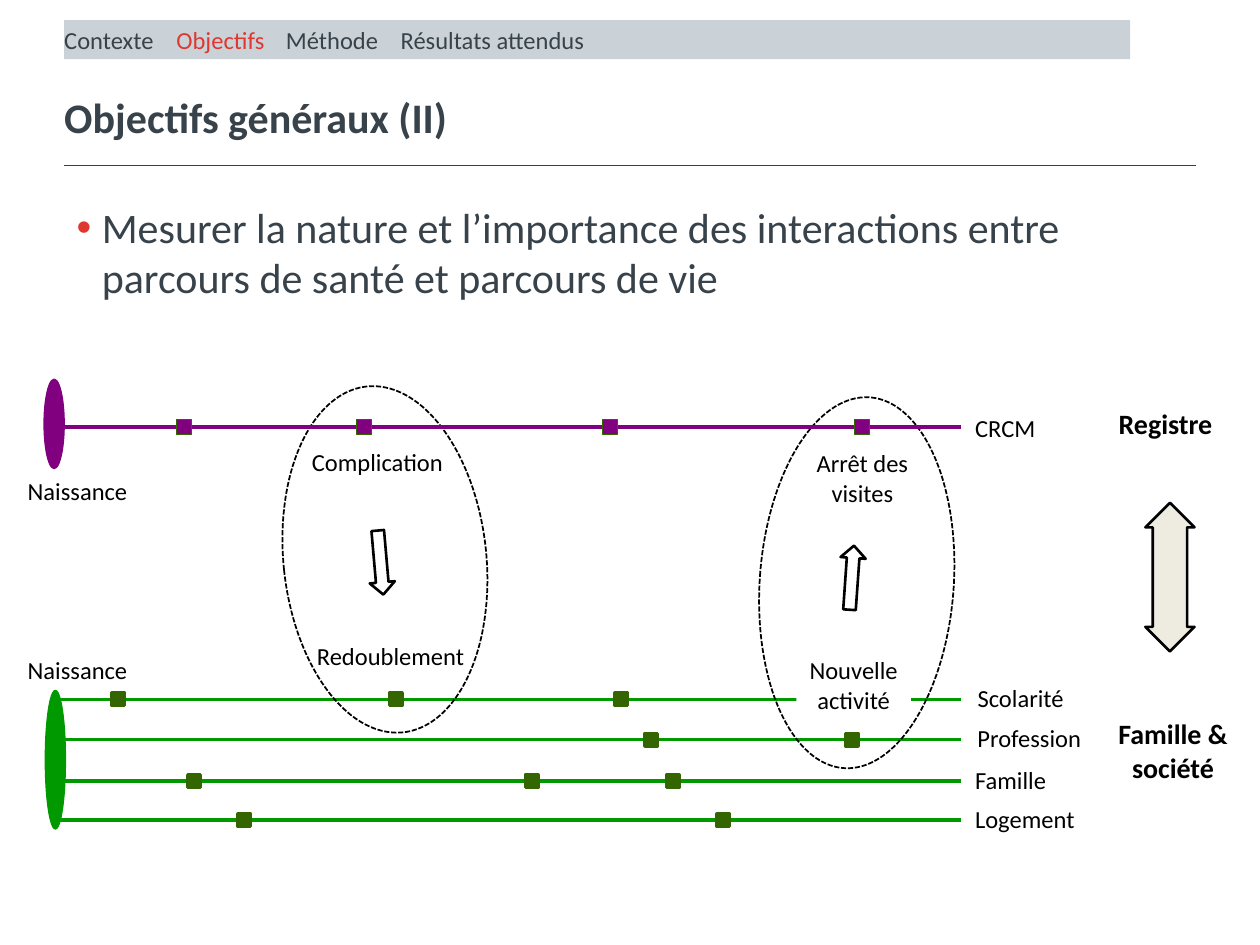
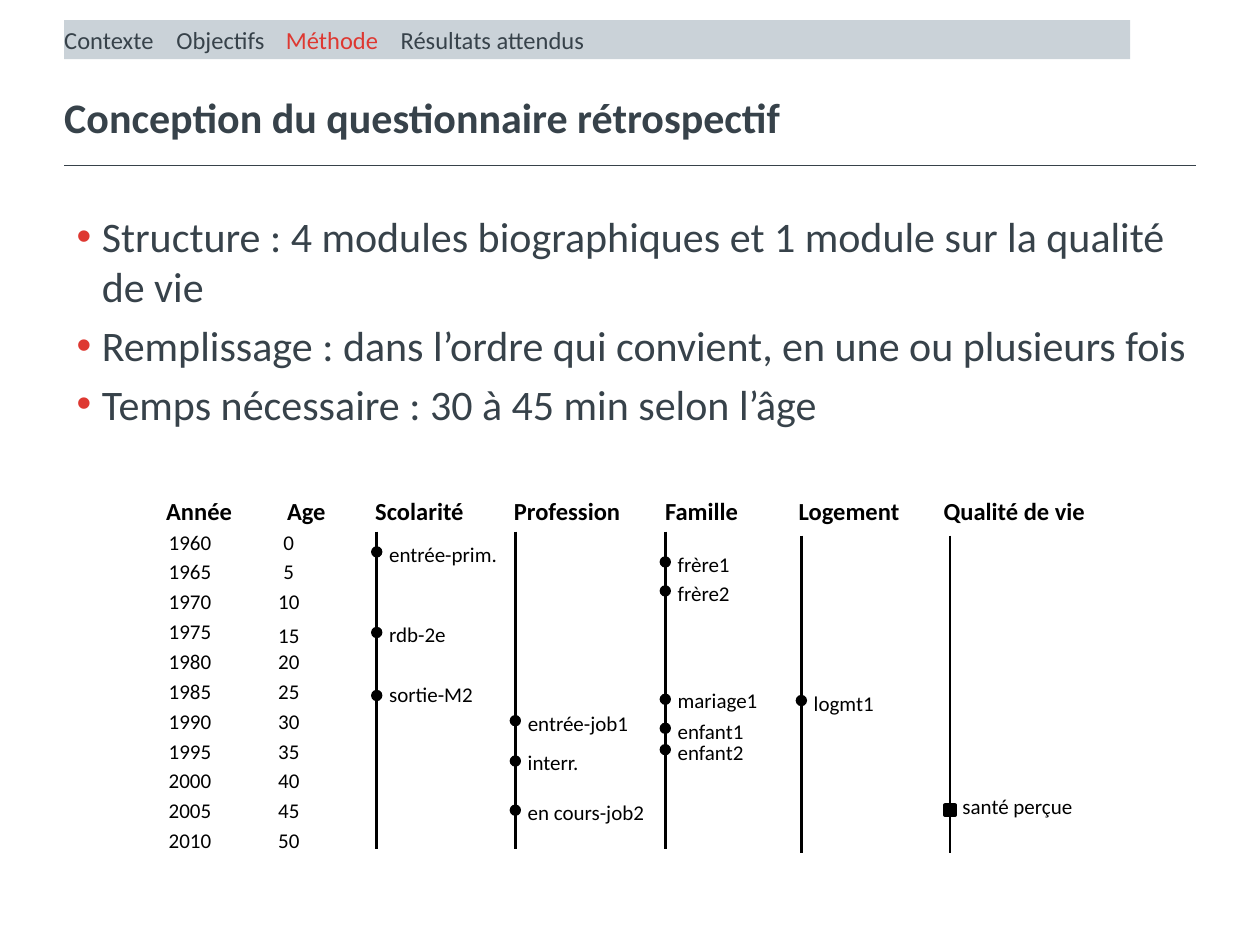
import pptx
import pptx.dml.color
import pptx.enum.dml
import pptx.enum.shapes
import pptx.enum.text
import pptx.oxml.ns
import pptx.util
from lxml import etree

Inches = pptx.util.Inches
Pt = pptx.util.Pt
SHAPE = pptx.enum.shapes.MSO_SHAPE
ALIGN = pptx.enum.text.PP_ALIGN
ANCHOR = pptx.enum.text.MSO_ANCHOR
AUTO_SIZE = pptx.enum.text.MSO_AUTO_SIZE
qn = pptx.oxml.ns.qn

COLORS = {
    "slate": "37424A", "band": "CAD2D8", "accent": "DE3831",
    "black": "000000", "white": "FFFFFF", "ivory": "EEECE1",
    "green": "009900", "dark green": "336600", "purple": "800080",
}
FORMATS = {
    "title": {"size": Pt(24), "bold": True, "color": "slate"},
    "bullet": {"size": Pt(24), "color": "slate"},
    "band": {"size": Pt(14), "color": "slate"},
    "band current": {"size": Pt(14), "color": "accent"},
    "group": {"size": Pt(16), "bold": True, "color": "black"},
    "header": {"size": Pt(14), "bold": True, "color": "black"},
    "label": {"size": Pt(14), "color": "black"},
    "entry": {"size": Pt(12), "color": "black"},
}
SECTIONS = ["Contexte", "Objectifs", "Méthode", "Résultats attendus"]
SECTION_TABS = [0.89, 1.76, 2.67]


def rgb(name):
    return pptx.dml.color.RGBColor.from_string(COLORS[name])


class SlideBuilder:
    FONT = "Calibri"

    def __init__(self, deck):
        self.deck = deck
        self.page = None

    def start(self, title, section):
        """Add a slide with its title, rule and section band."""
        self.page = self.deck.slides.add_slide(self.deck.slide_layouts[5])
        self.line(0.51, 1.31, 9.49, 1.31, "slate", 0.5)
        box = self.page.shapes.title
        self.place(box, 0.51, 0.63, 8.47, 0.59)
        self.frame(box, left_inset=0)
        self.fill_text(box, [title], "title")
        band = self.shape(SHAPE.RECTANGLE, 0.51, 0.16, 8.46, 0.31, "band")
        self.frame(band, left_inset=0)
        para = band.text_frame.paragraphs[0]
        para.alignment = ALIGN.LEFT
        self.tabs(para, SECTION_TABS)
        for index, name in enumerate(SECTIONS):
            style = "band current" if name == section else "band"
            self.span(para, "\t" + name if index else name, style)

    @staticmethod
    def place(box, left, top, width, height):
        box.left, box.top = Inches(left), Inches(top)
        box.width, box.height = Inches(width), Inches(height)

    @staticmethod
    def frame(box, left_inset=0.1, wrap=True, anchor=ANCHOR.MIDDLE,
              auto_size=AUTO_SIZE.NONE):
        settings = {
            "margin_left": Inches(left_inset), "margin_right": Inches(0.1),
            "margin_top": Inches(0.05), "margin_bottom": Inches(0.05),
            "word_wrap": wrap, "vertical_anchor": anchor,
            "auto_size": auto_size,
        }
        for name, value in settings.items():
            setattr(box.text_frame, name, value)

    @staticmethod
    def tabs(para, stops):
        tab_list = etree.SubElement(para._p.get_or_add_pPr(), qn("a:tabLst"))
        for stop in stops:
            etree.SubElement(tab_list, qn("a:tab"), pos=str(Inches(stop)),
                             algn="l")

    def span(self, para, text, style):
        span = para.add_run()
        span.text = text
        span.font.name = self.FONT
        for name, value in FORMATS[style].items():
            if name == "color":
                span.font.color.rgb = rgb(value)
            else:
                setattr(span.font, name, value)

    def fill_text(self, box, lines, style, align=ALIGN.LEFT):
        for index, text in enumerate(lines):
            frame = box.text_frame
            para = frame.add_paragraph() if index else frame.paragraphs[0]
            para.alignment = align
            self.span(para, text, style)
        return box

    def text(self, lines, left, top, width, height, style,
             align=ALIGN.LEFT, wrap=False):
        box = self.page.shapes.add_textbox(
            Inches(left), Inches(top), Inches(width), Inches(height))
        self.frame(box, wrap=wrap, anchor=ANCHOR.TOP,
                   auto_size=AUTO_SIZE.SHAPE_TO_FIT_TEXT)
        return self.fill_text(box, lines, style, align)

    def bullets(self, lines, left, top, width, height):
        box = self.text(lines, left, top, width, height, "bullet", wrap=True)
        for index, para in enumerate(box.text_frame.paragraphs):
            props = para._p.get_or_add_pPr()
            props.set("marL", str(Inches(0.2)))
            props.set("indent", str(-Inches(0.2)))
            color = etree.SubElement(props, qn("a:buClr"))
            etree.SubElement(color, qn("a:srgbClr"), val=COLORS["accent"])
            etree.SubElement(props, qn("a:buFont"), typeface="Arial")
            etree.SubElement(props, qn("a:buChar"), char="•")
            para.space_before = Pt(4.8 if index else 0)

    def shape(self, kind, left, top, width, height, fill=None, line=None,
              weight=0.75, rotation=0, adjust=(), dash=None):
        box = self.page.shapes.add_shape(
            kind, Inches(left), Inches(top), Inches(width), Inches(height))
        box.shadow.inherit = False
        box.rotation = rotation
        if fill:
            box.fill.solid()
            box.fill.fore_color.rgb = rgb(fill)
        else:
            box.fill.background()
        if line:
            box.line.color.rgb = rgb(line)
            box.line.width = Pt(weight)
            if dash:
                box.line.dash_style = dash
        else:
            box.line.fill.background()
        for index, value in enumerate(adjust):
            box.adjustments[index] = value
        return box

    def line(self, x1, y1, x2, y2, color, weight):
        rule = self.page.shapes.add_connector(
            pptx.enum.shapes.MSO_CONNECTOR.STRAIGHT,
            Inches(x1), Inches(y1), Inches(x2), Inches(y2))
        rule.line.color.rgb = rgb(color)
        rule.line.width = Pt(weight)
        etree.SubElement(rule._element.spPr, qn("a:effectLst"))

    def track(self, y, start, color, marks, size, mark_fill, mark_weight):
        """Draw a life-course line with a square at each event."""
        self.line(start, y, 7.63, y, color, 2)
        for left in marks:
            self.shape(SHAPE.RECTANGLE, left, y - size / 2, size, size,
                       mark_fill, "dark green", mark_weight)

    def loop(self, left, top, width, height, rotation):
        """Draw the dashed outline that ties two linked events."""
        self.shape(SHAPE.OVAL, left, top, width, height, line="black",
                   weight=1, rotation=rotation,
                   dash=pptx.enum.dml.MSO_LINE.SQUARE_DOT)

    def link_arrow(self, left, top, rotation):
        self.shape(SHAPE.UP_ARROW, left, top, 0.2, 0.51, "white", "black",
                   1.5, rotation, (0.5, 0.49))


def build_objectives(builder):
    builder.start("Objectifs généraux (II)", "Objectifs")
    builder.bullets(["Mesurer la nature et l’importance des interactions "
                     "entre parcours de santé et parcours de vie"],
                    0.51, 1.55, 8.98, 0.91)

    builder.text(["Registre"], 8.78, 3.18, 0.95, 0.37, "group")
    builder.shape(SHAPE.UP_DOWN_ARROW, 9.09, 3.99, 0.39, 1.18, "ivory",
                  "black", 1.5, adjust=(0.5, 0.7))
    builder.text(["Famille &", "société"], 8.73, 5.64, 1.16, 0.64, "group",
                 ALIGN.CENTER)

    # label, line height, line start, label left, label width, marks
    life_tracks = [
        ("Scolarité", 5.55, 0.44, 7.66, 0.92, [0.89, 3.09, 4.88]),
        ("Profession", 5.87, 0.49, 7.66, 1.07, [5.12, 6.71]),
        ("Famille", 6.2, 0.49, 7.64, 0.8, [1.49, 4.17, 5.29]),
        ("Logement", 6.51, 0.44, 7.64, 1.03, [1.89, 5.69]),
    ]
    builder.shape(SHAPE.OVAL, 0.36, 5.48, 0.16, 1.1, "green", "green")
    for label, y, start, left, width, marks in life_tracks:
        builder.track(y, start, "green", marks, 0.1, "dark green", 2)
        builder.text([label], left, y - 0.18, width, 0.34, "label", wrap=True)

    builder.text(["Complication"], 2.37, 3.5, 1.25, 0.34, "label",
                 ALIGN.CENTER)
    builder.link_arrow(2.92, 4.21, 175)
    builder.text(["Redoublement"], 2.41, 5.04, 1.38, 0.34, "label",
                 ALIGN.CENTER)
    builder.loop(2.25, 3.06, 1.61, 2.76, 354)

    builder.text(["Arrêt des", "visites"], 6.21, 3.51, 1.27, 0.57, "label",
                 ALIGN.CENTER, wrap=True)
    builder.link_arrow(6.66, 4.33, 4)
    activity = builder.shape(SHAPE.RECTANGLE, 6.32, 5.15, 0.91, 0.57, "white")
    builder.frame(activity, wrap=False)
    builder.fill_text(activity, ["Nouvelle", "activité"], "label",
                      ALIGN.CENTER)
    builder.loop(6.03, 3.15, 1.54, 2.95, 4)

    builder.shape(SHAPE.OVAL, 0.35, 3.01, 0.16, 0.71, "purple", "purple")
    builder.track(3.39, 0.45, "purple", [1.4, 2.83, 4.78, 6.78], 0.12,
                  "purple", 0.75)
    builder.text(["CRCM"], 7.64, 3.23, 0.69, 0.34, "label")
    for top in (3.73, 5.15):
        builder.text(["Naissance"], 0.12, top, 0.99, 0.33, "label",
                     ALIGN.CENTER)


def build_questionnaire(builder):
    builder.start("Conception du questionnaire rétrospectif", "Méthode")
    builder.bullets([
        "Structure : 4 modules biographiques et 1 module sur la qualité de vie",
        "Remplissage : dans l’ordre qui convient, en une ou plusieurs fois",
        "Temps nécessaire : 30 à 45 min selon l’âge",
    ], 0.51, 1.62, 9.06, 1.88)

    headers = ["Année", "Age", "Scolarité", "Profession", "Famille",
               "Logement", "Qualité de vie"]
    box = builder.text(["\t".join(headers)], 1.22, 3.89, 7.64, 0.34, "header",
                       wrap=True)
    builder.tabs(box.text_frame.paragraphs[0],
                 [0.96, 1.66, 2.76, 3.96, 5.02, 6.17])

    for step in range(11):
        age = 5 * step
        top = 4.15 + 2.37 * step / 10
        left, width = (2.15, 0.29) if age < 10 else (2.11, 0.37)
        builder.text([str(1960 + age)], 1.24, top, 0.55, 0.3, "entry")
        age_top = top + 0.03 if age == 15 else top
        builder.text([str(age)], left, age_top, width, 0.3, "entry")

    # axis position, axis top, events as (label, mark top, label top, width)
    modules = [
        (2.99, 4.22, [("entrée-prim.", 4.34, 4.25, 1.07),
                      ("rdb-2e", 4.98, 4.88, 0.66),
                      ("sortie-M2", 5.48, 5.36, 0.88)]),
        (4.09, 4.22, [("entrée-job1", 5.68, 5.59, 1.01),
                      ("interr.", 6, 5.9, 0.63),
                      ("en cours-job2", 6.39, 6.3, 1.14)]),
        (5.28, 4.22, [("frère1", 4.42, 4.33, 0.62),
                      ("frère2", 4.65, 4.56, 0.62),
                      ("mariage1", 5.51, 5.41, 0.84),
                      ("enfant1", 5.74, 5.65, 0.73),
                      ("enfant2", 5.91, 5.82, 0.73)]),
        (6.36, 4.25, [("logmt1", 5.52, 5.43, 0.69)]),
        (7.54, 4.25, [("santé perçue", 6.39, 6.25, 1.08)]),
    ]
    for axis, axis_top, events in modules:
        builder.line(axis, axis_top, axis, axis_top + 2.52, "black", 1.5)
        for label, mark_top, label_top, width in events:
            kind, weight = SHAPE.OVAL, 0.75
            if label == "santé perçue":
                kind, weight = SHAPE.RECTANGLE, 2
            builder.shape(kind, axis - 0.04, mark_top, 0.08, 0.08, "black",
                          "black", weight)
            builder.text([label], axis, label_top, width, 0.3, "entry")


def main():
    deck = pptx.Presentation()
    deck.slide_width, deck.slide_height = Inches(10), Inches(7.5)
    builder = SlideBuilder(deck)
    build_objectives(builder)
    build_questionnaire(builder)
    deck.save("out.pptx")


if __name__ == "__main__":
    main()
